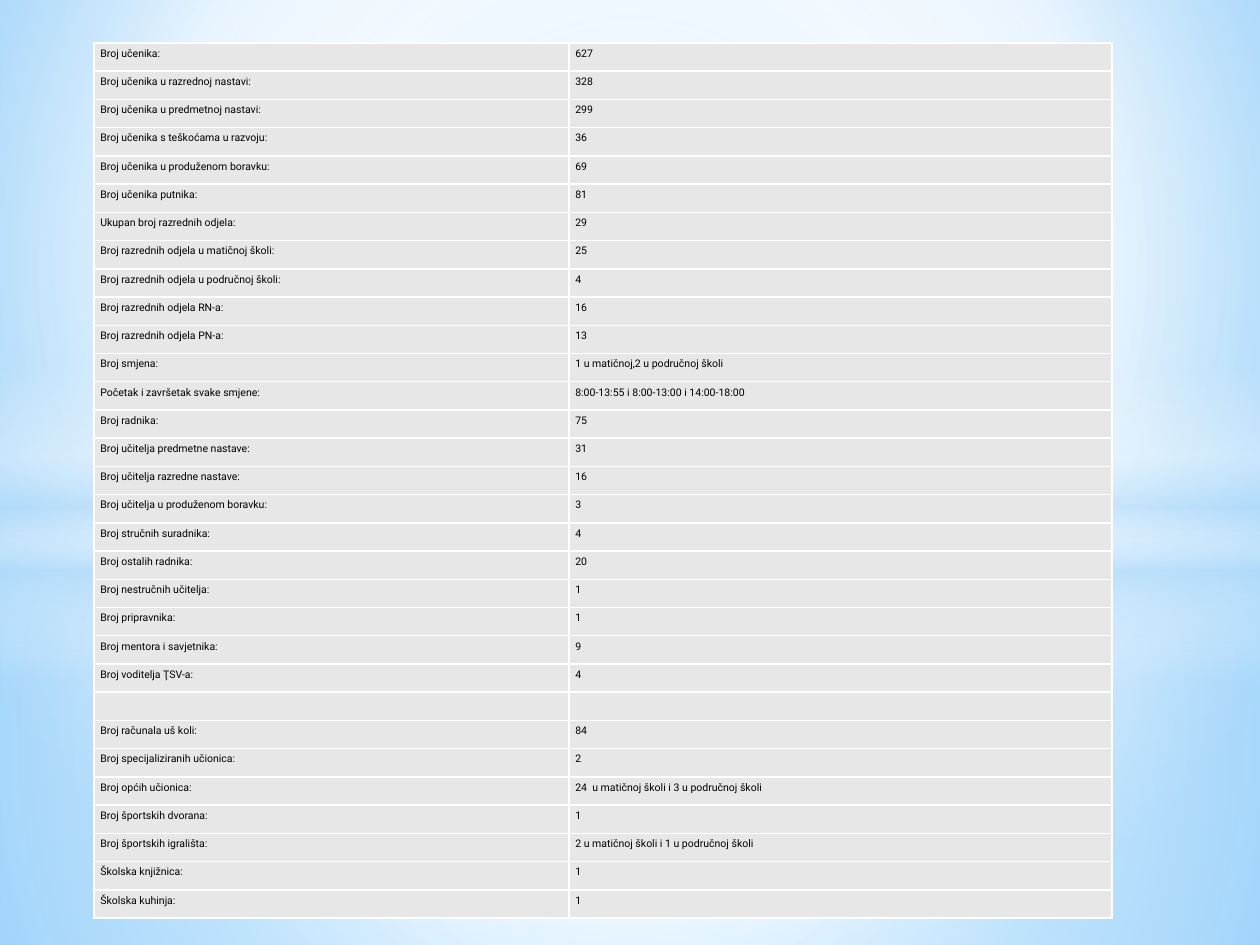
from lxml import etree
from pptx import Presentation
from pptx import util as u
from pptx.dml.color import RGBColor
from pptx.enum import shapes
from pptx.oxml import parse_xml
from pptx.oxml.ns import nsdecls, qn

ROWS = [
    ("Broj učenika:", "627"),
    ("Broj učenika u razrednoj nastavi:", "328"),
    ("Broj učenika u predmetnoj nastavi:", "299"),
    ("Broj učenika s teškoćama u razvoju:", "36"),
    ("Broj učenika u produženom boravku:", "69"),
    ("Broj učenika putnika:", "81"),
    ("Ukupan broj razrednih odjela:", "29"),
    ("Broj razrednih odjela u matičnoj školi:", "25"),
    ("Broj razrednih odjela u područnoj školi:", "4"),
    ("Broj razrednih odjela RN-a:", "16"),
    ("Broj razrednih odjela PN-a:", "13"),
    ("Broj smjena:", "1 u matičnoj,2 u područnoj školi"),
    ("Početak i završetak svake smjene:", "8:00-13:55 i 8:00-13:00 i 14:00-18:00"),
    ("Broj radnika:", "75"),
    ("Broj učitelja predmetne nastave:", "31"),
    ("Broj učitelja razredne nastave:", "16"),
    ("Broj učitelja u produženom boravku:", "3"),
    ("Broj stručnih suradnika:", "4"),
    ("Broj ostalih radnika:", "20"),
    ("Broj nestručnih učitelja:", "1"),
    ("Broj pripravnika:", "1"),
    ("Broj mentora i savjetnika:", "9"),
    ("Broj voditelja ŢSV-a:", "4"),
    ("", ""),
    ("Broj računala uš koli:", "84"),
    ("Broj specijaliziranih učionica:", "2"),
    ("Broj općih učionica:", "24  u matičnoj školi i 3 u područnoj školi"),
    ("Broj športskih dvorana:", "1"),
    ("Broj športskih igrališta:", "2 u matičnoj školi i 1 u područnoj školi"),
    ("Školska knjižnica:", "1"),
    ("Školska kuhinja:", "1"),
]
WHITE, SKY, GREY, BLACK = "FFFFFF", "B4DCFA", "E7E7E7", "000000"
CENTRE = (50, 50, 50, 50)
BACKGROUND = [(0, "9ED5FF", 100), (60, WHITE, 100), (100, "5BB9FF", 100)]
RECT, OVAL = shapes.MSO_SHAPE.RECTANGLE, shapes.MSO_SHAPE.OVAL
GLOWS = [
    (RECT, (0, 533, 1260, 412), [(0, WHITE, 91), (37, WHITE, 76), (100, SKY, 79)], CENTRE),
    (RECT, (0, 0, 1260, 533), [(0, WHITE, 89), (48, WHITE, 62), (100, SKY, 79)], CENTRE),
    (RECT, (0, 365, 1260, 315), [(0, WHITE, 0), (29, WHITE, 30), (45, SKY, 40),
                                 (55, WHITE, 26), (65, SKY, 60), (100, WHITE, 0)], None),
    (OVAL, (0, 220, 1260, 703), [(0, WHITE, 100), (54, WHITE, 0)], CENTRE),
]
TABLE = (94, 43, 1018, 876)
COLS = (475, 543)


def px(n):
    return u.Emu(round(n * 914400 / 126))


def rgb(h):
    return RGBColor.from_string(h)


def set_gradient(fill, owner, stops, focus):
    fill.gradient()
    old = owner.xpath(".//a:gradFill")[0]
    gs = "".join(
        f'<a:gs pos="{pos * 1000}"><a:srgbClr val="{c}"><a:alpha val="{a * 1000}"/></a:srgbClr></a:gs>'
        for pos, c, a in stops)
    if focus:
        l, t, r, b = (v * 1000 for v in focus)
        shade = f'<a:path path="circle"><a:fillToRect l="{l}" t="{t}" r="{r}" b="{b}"/></a:path>'
    else:
        shade = '<a:lin ang="5400000" scaled="0"/>'
    new = parse_xml(f'<a:gradFill {nsdecls("a")} rotWithShape="1"><a:gsLst>{gs}</a:gsLst>{shade}</a:gradFill>')
    old.getparent().replace(old, new)


def set_borders(cell):
    tcPr = cell._tc.get_or_add_tcPr()
    for i, side in enumerate("LRTB"):
        tcPr.insert(i, parse_xml(
            f'<a:ln{side} {nsdecls("a")} w="12700"><a:solidFill><a:srgbClr val="{WHITE}"/>'
            f'</a:solidFill></a:ln{side}>'))


def fill_cell(cell, words):
    cell.fill.solid()
    cell.fill.fore_color.rgb = rgb(GREY)
    set_borders(cell)
    cell.margin_left = cell.margin_right = u.Inches(0.05)
    cell.margin_top = cell.margin_bottom = u.Inches(0.03)
    p = cell.text_frame.paragraphs[0]
    p.text = words
    p.line_spacing = 1.07
    p.space_after = u.Pt(8)
    for r in p.runs:
        r.font.size = u.Pt(6)
        r.font.name = "Roboto"
        r.font.color.rgb = rgb(BLACK)
    if not words:
        etree.SubElement(p._p, qn("a:endParaRPr"), sz="600")


prs = Presentation()
prs.slide_width, prs.slide_height = px(1260), px(945)
s = prs.slides.add_slide(prs.slide_layouts[6])
set_gradient(s.background.fill, s.element, BACKGROUND, (20, 10, 20, 60))

for kind, box, stops, focus in GLOWS:
    sp = s.shapes.add_shape(kind, *map(px, box))
    sp.shadow.inherit = False
    sp.line.fill.background()
    set_gradient(sp.fill, sp.element, stops, focus)

table = s.shapes.add_table(len(ROWS), len(COLS), *map(px, TABLE)).table
table.first_row = table.horz_banding = False
for col, width in zip(table.columns, COLS):
    col.width = px(width)
for row, words in zip(table.rows, ROWS):
    row.height = px(TABLE[3] / len(ROWS))
    for cell, value in zip(row.cells, words):
        fill_cell(cell, value)

prs.save("out.pptx")
